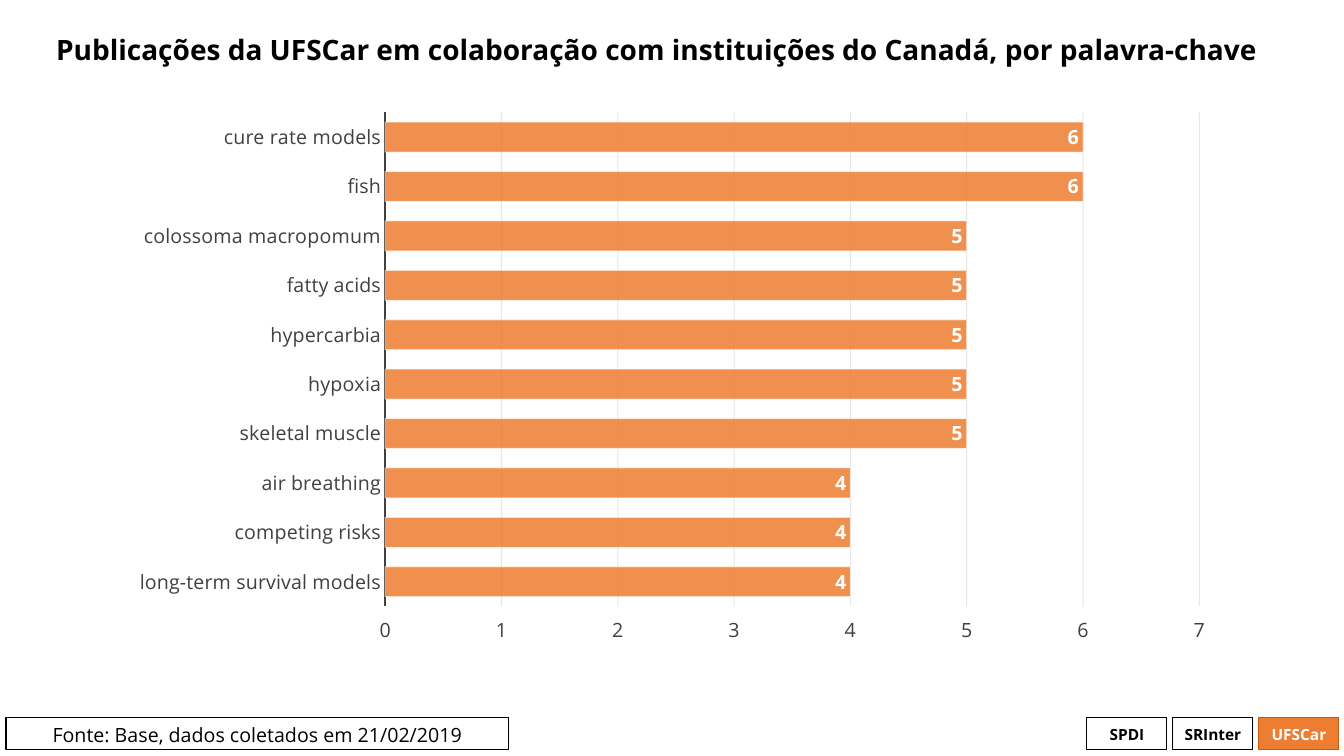
import lxml.etree
import pptx
import pptx.chart.data
import pptx.dml.color
import pptx.enum.chart
import pptx.enum.shapes
import pptx.enum.text
import pptx.oxml
import pptx.oxml.ns
import pptx.util

PX = 12192000 / 1344
FONT = "Open Sans"
BLACK = pptx.dml.color.RGBColor(0x00, 0x00, 0x00)
WHITE = pptx.dml.color.RGBColor(0xFF, 0xFF, 0xFF)
ORANGE = pptx.dml.color.RGBColor(0xED, 0x7D, 0x31)
DARK_ORANGE = pptx.dml.color.RGBColor(0xC5, 0x5A, 0x11)
GREY = pptx.dml.color.RGBColor(0x40, 0x40, 0x40)
GRID = pptx.dml.color.RGBColor(0x0D, 0x0D, 0x0D)

TITLE = "Publicações da UFSCar em colaboração com instituições do Canadá, por palavra-chave"
SOURCE = "Fonte: Base, dados coletados em 21/02/2019"
KEYWORDS = {
    "cure rate models": 6,
    "fish": 6,
    "colossoma macropomum": 5,
    "fatty acids": 5,
    "hypercarbia": 5,
    "hypoxia": 5,
    "skeletal muscle": 5,
    "air breathing": 4,
    "competing risks": 4,
    "long-term survival models": 4,
}
CHART_BOX = (116, 100, 1111, 555)
PLOT_BOX = (385, 112, 815, 495)


def px(value):
    return round(value * PX)


def style_font(font, size, color, bold=False):
    font.name = FONT
    font.size = pptx.util.Pt(size)
    font.bold = bold
    font.color.rgb = color


def style_line(line, color, width=0.75):
    line.color.rgb = color
    line.width = pptx.util.Pt(width)


def write_text(box, text, *, size, color=BLACK, bold=False, align, anchor, spacing=1.0):
    frame = box.text_frame
    frame.word_wrap = True
    frame.auto_size = pptx.enum.text.MSO_AUTO_SIZE.NONE
    frame.vertical_anchor = anchor
    para = frame.paragraphs[0]
    para.alignment = align
    para.line_spacing = spacing
    span = para.add_run()
    span.text = text
    style_font(span.font, size, color, bold)


def add_title(page):
    title = page.shapes.title
    title.left, title.top, title.width, title.height = map(px, (46, 5, 1251, 92))
    write_text(title, TITLE, size=20, bold=True, spacing=0.9,
               align=pptx.enum.text.PP_ALIGN.LEFT,
               anchor=pptx.enum.text.MSO_ANCHOR.MIDDLE)


def add_label(page, text, left, width, *, fill=None, line=BLACK, color=BLACK,
              size=11, bold=True, anchor=pptx.enum.text.MSO_ANCHOR.MIDDLE):
    box = page.shapes.add_shape(pptx.enum.shapes.MSO_SHAPE.RECTANGLE,
                                px(left), px(718), px(width), px(32))
    box.shadow.inherit = False
    if fill is None:
        box.fill.background()
    else:
        box.fill.solid()
        box.fill.fore_color.rgb = fill
    style_line(box.line, line)
    write_text(box, text, size=size, color=color, bold=bold, anchor=anchor,
               align=pptx.enum.text.PP_ALIGN.CENTER)


def set_opacity(chart, query, percent):
    for color in chart.element.xpath(query):
        alpha = lxml.etree.SubElement(color, pptx.oxml.ns.qn("a:alpha"))
        alpha.set("val", str(percent * 1000))


def place_plot(chart):
    left, top, width, height = CHART_BOX
    plot_left, plot_top, plot_width, plot_height = PLOT_BOX
    fractions = {
        "x": (plot_left - left) / width,
        "y": (plot_top - top) / height,
        "w": plot_width / width,
        "h": plot_height / height,
    }
    modes = "".join(f'<c:{name}Mode val="edge"/>' for name in "xy")
    sizes = "".join(f'<c:{name} val="{value:.4f}"/>' for name, value in fractions.items())
    layout = pptx.oxml.parse_xml(
        f'<c:layout {pptx.oxml.ns.nsdecls("c")}><c:manualLayout>'
        f'<c:layoutTarget val="inner"/>{modes}{sizes}</c:manualLayout></c:layout>')
    plot_area = chart.element.xpath("c:chart/c:plotArea")[0]
    for previous in plot_area.xpath("c:layout"):
        plot_area.remove(previous)
    plot_area.insert(0, layout)


def paint_chart_area(chart):
    fill = f'<a:solidFill><a:srgbClr val="{WHITE}"/></a:solidFill>'
    area = pptx.oxml.parse_xml(
        f'<c:spPr {pptx.oxml.ns.nsdecls("c", "a")}>{fill}<a:ln w="9525">{fill}</a:ln></c:spPr>')
    chart.element.xpath("c:chart")[0].addnext(area)


def style_axes(chart):
    categories, values = chart.category_axis, chart.value_axis
    for axis in (categories, values):
        axis.major_tick_mark = pptx.enum.chart.XL_TICK_MARK.NONE
        axis.minor_tick_mark = pptx.enum.chart.XL_TICK_MARK.NONE
        style_font(axis.tick_labels.font, 14, GREY)
    categories.reverse_order = True
    style_line(categories.format.line, GREY, 1.5)
    values.tick_label_position = pptx.enum.chart.XL_TICK_LABEL_POSITION.HIGH
    values.minimum_scale, values.maximum_scale, values.major_unit = 0, 7, 1
    values.format.line.fill.background()
    style_line(values.major_gridlines.format.line, GRID)
    set_opacity(chart, ".//c:majorGridlines/c:spPr/a:ln/a:solidFill/a:srgbClr", 10)


def style_bars(chart):
    plot = chart.plots[0]
    plot.gap_width = 65
    plot.vary_by_categories = False
    bars = plot.series[0]
    bars.format.fill.solid()
    bars.format.fill.fore_color.rgb = ORANGE
    style_line(bars.format.line, WHITE)
    set_opacity(chart, ".//c:ser/c:spPr/a:solidFill/a:srgbClr", 85)
    set_opacity(chart, ".//c:ser/c:spPr/a:ln/a:solidFill/a:srgbClr", 50)
    labels = bars.data_labels
    labels.show_value = True
    labels.position = pptx.enum.chart.XL_LABEL_POSITION.INSIDE_END
    style_font(labels.font, 14, WHITE, True)


def add_keyword_chart(page):
    data = pptx.chart.data.CategoryChartData()
    data.categories = list(KEYWORDS)
    data.add_series("Series 1", list(KEYWORDS.values()))
    chart = page.shapes.add_chart(pptx.enum.chart.XL_CHART_TYPE.BAR_CLUSTERED,
                                  *map(px, CHART_BOX), data).chart
    chart.has_legend = False
    chart.has_title = False
    style_font(chart.font, 14, BLACK)
    style_axes(chart)
    style_bars(chart)
    place_plot(chart)
    paint_chart_area(chart)


def main():
    deck = pptx.Presentation()
    deck.slide_width, deck.slide_height = px(1344), px(756)
    page = deck.slides.add_slide(deck.slide_layouts[5])
    add_label(page, "SPDI", 1087, 80)
    add_label(page, "SRInter", 1173, 80)
    add_label(page, "UFSCar", 1259, 80, fill=ORANGE, line=DARK_ORANGE, color=WHITE)
    add_label(page, SOURCE, 6, 503, size=14, bold=False,
              anchor=pptx.enum.text.MSO_ANCHOR.TOP)
    add_title(page)
    add_keyword_chart(page)
    deck.save("out.pptx")


if __name__ == "__main__":
    main()
